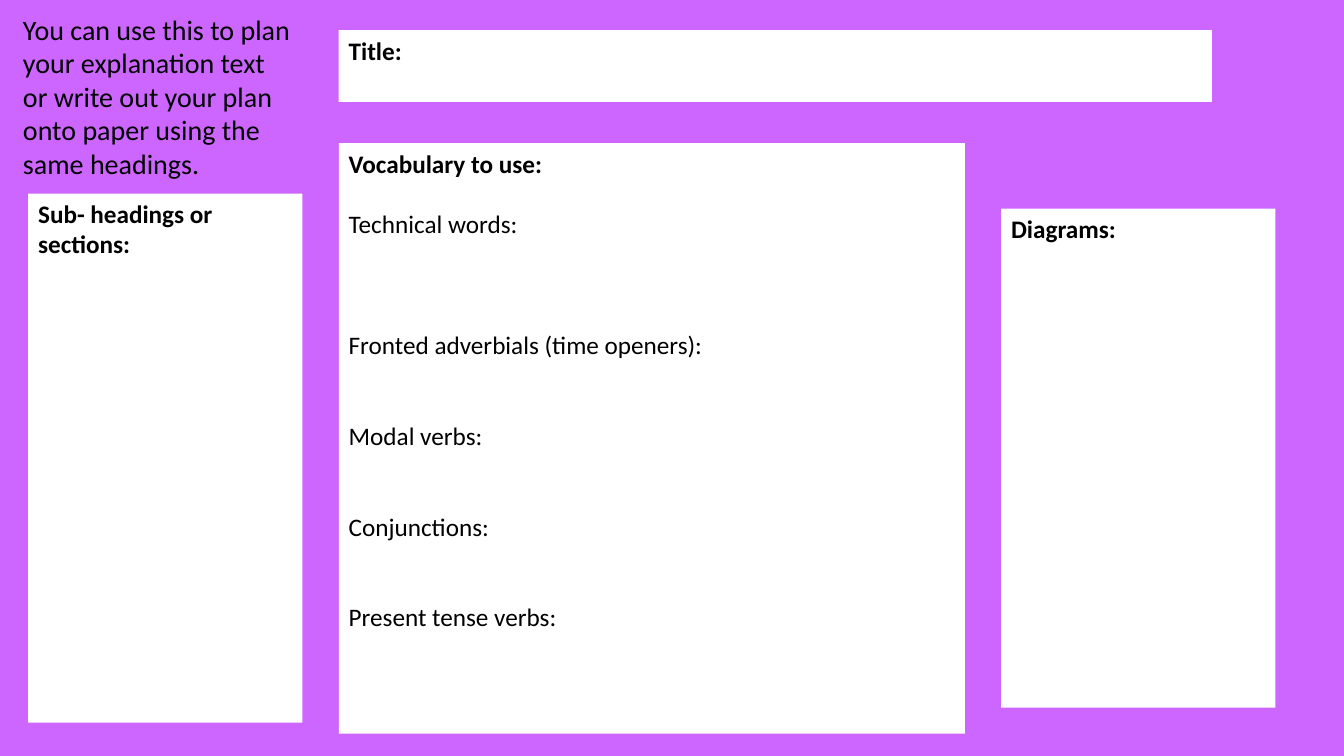
"""Build a one-slide planning sheet for an explanation text."""
from pptx import Presentation
from pptx.dml.color import RGBColor
from pptx.enum.shapes import MSO_SHAPE
from pptx.enum.text import MSO_ANCHOR, PP_ALIGN
from pptx.util import Inches, Pt

RECTANGLE = MSO_SHAPE.RECTANGLE
TOP = MSO_ANCHOR.TOP
LEFT = PP_ALIGN.LEFT

THEME = {
    "font": "Calibri",
    "background": RGBColor(0xCC, 0x66, 0xFF),
    "panel": RGBColor(0xFF, 0xFF, 0xFF),
    "ink": RGBColor(0, 0, 0),
    "panel_size": Pt(18),
    "intro_size": Pt(20),
    "line_height": 21.6,
}

INTRO = (
    "You can use this to plan your explanation text or write out your plan "
    "onto paper using the same headings."
)
INTRO_BOX = (0.13, 0.07, 2.87, 1.78)

VOCABULARY_PROMPTS = [
    ("Technical words:", 1),
    ("Fronted adverbials (time openers):", 3),
    ("Modal verbs:", 2),
    ("Conjunctions:", 2),
    ("Present tense verbs:", 2),
]

PANELS = [
    ("Title:", (3.36, 0.3, 8.66, 0.71), []),
    ("Sub- headings or sections:", (0.28, 1.92, 2.72, 5.25), []),
    ("Vocabulary to use:", (3.36, 1.42, 6.21, 5.86), VOCABULARY_PROMPTS),
    ("Diagrams:", (9.93, 2.07, 2.72, 4.95), []),
]


def style(paragraph, size, bold=False):
    paragraph.alignment = LEFT
    for run in paragraph.runs:
        run.font.name = THEME["font"]
        run.font.size = size
        run.font.bold = bold
        run.font.color.rgb = THEME["ink"]


def write(frame, heading, size, bold=False):
    frame.word_wrap = True
    frame.vertical_anchor = TOP
    frame.text = heading
    style(frame.paragraphs[0], size, bold)


def add_panel(slide, heading, box, prompts):
    panel = slide.shapes.add_shape(RECTANGLE, *map(Inches, box))
    panel.shadow.inherit = False
    panel.fill.solid()
    panel.fill.fore_color.rgb = THEME["panel"]
    panel.line.fill.background()
    write(panel.text_frame, heading, THEME["panel_size"], bold=True)
    for prompt, lines_above in prompts:
        paragraph = panel.text_frame.add_paragraph()
        paragraph.text = prompt
        paragraph.space_before = Pt(lines_above * THEME["line_height"])
        style(paragraph, THEME["panel_size"])


def main():
    deck = Presentation()
    deck.slide_width = Inches(13.33)
    deck.slide_height = Inches(7.5)
    slide = deck.slides.add_slide(deck.slide_layouts[6])
    slide.background.fill.solid()
    slide.background.fill.fore_color.rgb = THEME["background"]

    for heading, box, prompts in PANELS:
        add_panel(slide, heading, box, prompts)

    intro = slide.shapes.add_textbox(*map(Inches, INTRO_BOX))
    write(intro.text_frame, INTRO, THEME["intro_size"])
    deck.save("out.pptx")


if __name__ == "__main__":
    main()
